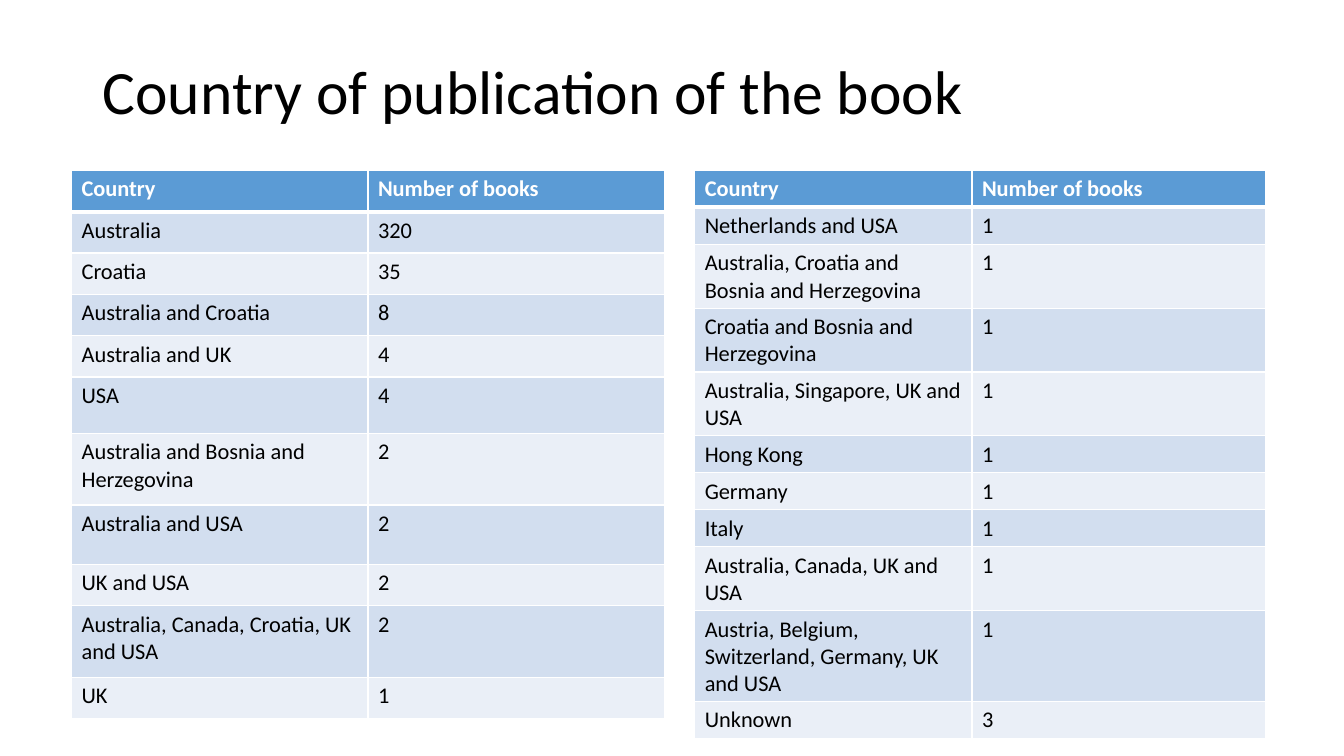
from lxml import etree
from pptx import Presentation
from pptx import util as u
from pptx.dml.color import RGBColor
from pptx.enum import text
from pptx.oxml import ns

WIDTH, HEIGHT = 13.33, 7.5
BLACK = RGBColor(0x00, 0x00, 0x00)
WHITE = RGBColor(0xFF, 0xFF, 0xFF)
HEADER_BLUE = RGBColor(0x5B, 0x9B, 0xD5)
BANDS = (RGBColor(0xD2, 0xDE, 0xEF), RGBColor(0xEA, 0xEF, 0xF7))

TABLE_TOP = 1.69
HEADINGS = ("Country", "Number of books")

# Country, number of books, and a row height where it is not the usual one
FREQUENT = [
    ("Australia", 320),
    ("Croatia", 35),
    ("Australia and Croatia", 8),
    ("Australia and UK", 4),
    ("USA", 4, 0.56),
    ("Australia and Bosnia and Herzegovina", 2, 0.71),
    ("Australia and USA", 2, 0.59),
    ("UK and USA", 2),
    ("Australia, Canada, Croatia, UK and USA", 2, 0.71),
    ("UK", 1),
]
RARE = [
    ("Netherlands and USA", 1),
    ("Australia, Croatia and Bosnia and Herzegovina", 1, 0.63),
    ("Croatia and Bosnia and Herzegovina", 1, 0.63),
    ("Australia, Singapore, UK and USA", 1, 0.63),
    ("Hong Kong", 1),
    ("Germany", 1),
    ("Italy", 1),
    ("Australia, Canada, UK and USA", 1, 0.63),
    ("Austria, Belgium, Switzerland, Germany, UK and USA", 1, 0.89),
    ("Unknown", 3),
]


def write(frame, words, color, **formats):
    """Put one formatted run of words into a text frame."""
    para = frame.paragraphs[0]
    span = para.add_run()
    span.text = words
    span.font.color.rgb = color
    for name, value in {"name": "Calibri", **formats}.items():
        setattr(span.font, name, value)
    return para


def add_title(page, words):
    box = page.shapes.add_textbox(
        u.Inches(0.92), u.Inches(0.4), u.Inches(11.5), u.Inches(1.07))
    frame = box.text_frame
    frame.word_wrap = True
    frame.vertical_anchor = text.MSO_ANCHOR.MIDDLE
    para = write(frame, words, BLACK, size=u.Pt(44))
    para.line_spacing = 0.9


def set_borders(cell, top, bottom):
    """Draw white cell borders; the line elements precede the fill."""
    properties = cell._tc.get_or_add_tcPr()
    edges = {"lnL": 1, "lnR": 1, "lnT": top, "lnB": bottom}
    for index, (edge, points) in enumerate(edges.items()):
        line = etree.Element(ns.qn(f"a:{edge}"), w=str(u.Pt(points)))
        fill = etree.SubElement(line, ns.qn("a:solidFill"))
        etree.SubElement(fill, ns.qn("a:srgbClr"), val=str(WHITE))
        properties.insert(index, line)


def fill_cell(cell, words, row):
    header = row == 0
    cell.fill.solid()
    cell.fill.fore_color.rgb = HEADER_BLUE if header else BANDS[(row - 1) % 2]
    write(cell.text_frame, words, WHITE if header else BLACK,
          size=u.Pt(16), bold=header)
    # The thick rule lies between the header and the first country
    set_borders(cell, top=3 if row == 1 else 1, bottom=3 if header else 1)


def add_country_table(page, left, widths, usual_height, countries):
    records = [HEADINGS, *countries]
    heights = [record[2] if len(record) > 2 else usual_height
               for record in records]
    table = page.shapes.add_table(
        len(records), len(widths), u.Inches(left), u.Inches(TABLE_TOP),
        u.Inches(sum(widths)), u.Inches(sum(heights))).table
    for column, width in zip(table.columns, widths):
        column.width = u.Inches(width)
    for row, (record, height) in enumerate(zip(records, heights)):
        table.rows[row].height = u.Inches(height)
        for column, value in enumerate(record[:2]):
            fill_cell(table.cell(row, column), str(value), row)


def main():
    deck = Presentation()
    deck.slide_width, deck.slide_height = u.Inches(WIDTH), u.Inches(HEIGHT)
    page = deck.slides.add_slide(deck.slide_layouts[6])

    add_title(page, "Country of publication of the book")

    # The list of countries runs on from the left table to the right one
    add_country_table(page, 0.71, (2.94, 2.94), 0.41, FREQUENT)
    add_country_table(page, 6.89, (2.75, 2.91), 0.36, RARE)

    deck.save("out.pptx")


if __name__ == "__main__":
    main()
